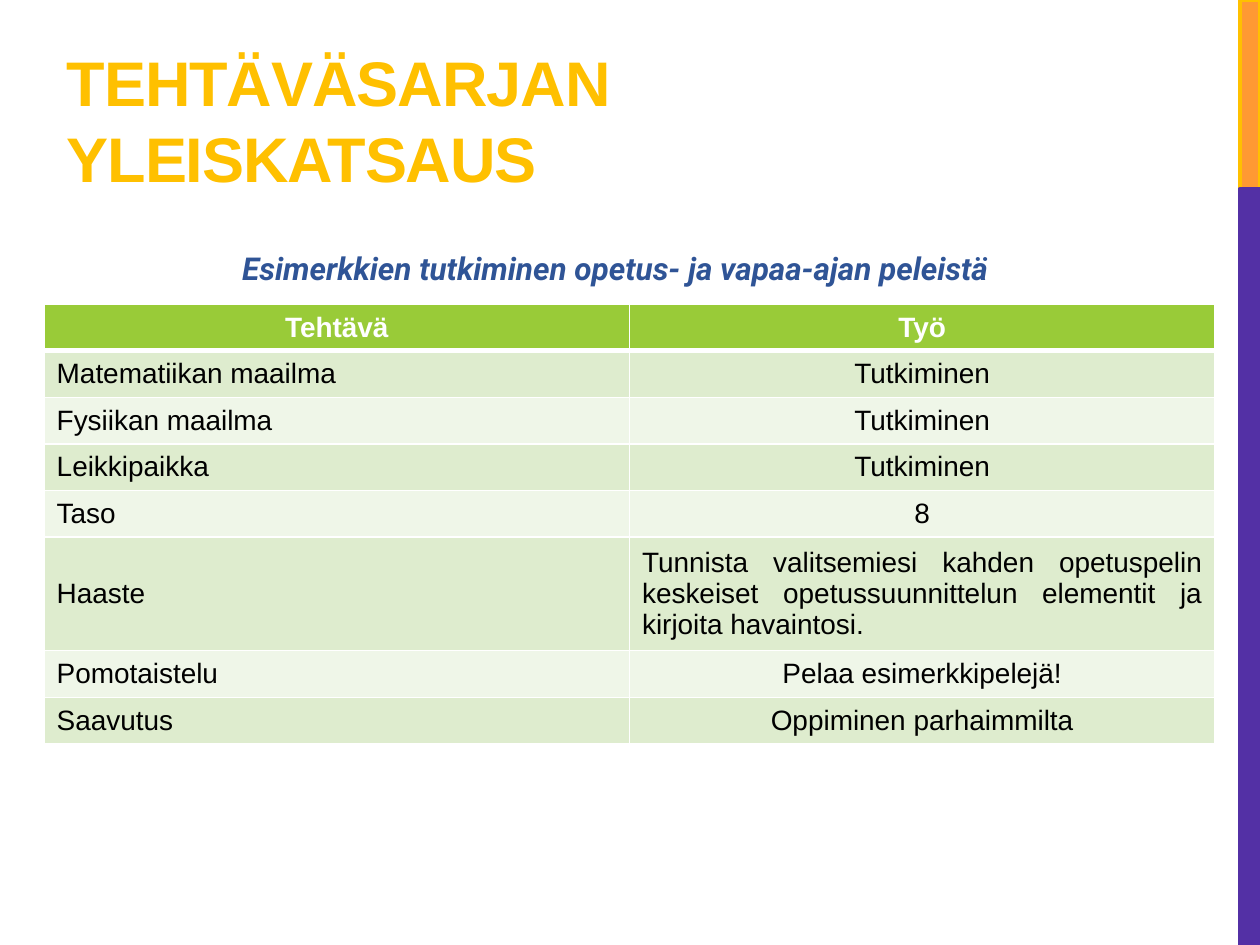
from dataclasses import dataclass

from lxml import etree
from pptx import Presentation
from pptx.dml.color import RGBColor
from pptx.enum.shapes import MSO_SHAPE
from pptx.enum.text import MSO_ANCHOR, MSO_AUTO_SIZE, PP_ALIGN
from pptx.oxml.ns import qn
from pptx.util import Cm, Pt

LEFT, CENTER, JUSTIFY = PP_ALIGN.LEFT, PP_ALIGN.CENTER, PP_ALIGN.JUSTIFY
TITLE_ONLY = 5
BAR_LEFT, BAR_WIDTH = 24.99, 0.41
ROW_HEIGHT, TALL_ROW_HEIGHT = 0.94, 2.23
COLUMN_WIDTH = 11.8
HEADER_FILL = "99CB38"
BAND_FILLS = ("DEECCE", "EFF6E8")

TITLE_FORMAT = {"name": "Arial", "size": Pt(36), "bold": True}
SUBTITLE_FORMAT = {"name": "Roboto", "size": Pt(18), "bold": True, "italic": True}
HEADER_FORMAT = {"name": "Arial", "size": Pt(16), "bold": True}
CELL_FORMAT = {**HEADER_FORMAT, "bold": False}


@dataclass
class Bar:
    top: float
    height: float
    fill: str
    line: str


@dataclass
class TaskRow:
    task: str
    work: str
    work_align: PP_ALIGN = CENTER
    height: float = ROW_HEIGHT


BARS = [
    Bar(0, 3.81, "FF9933", "FFC000"),
    Bar(3.81, 15.24, "5330A5", "5330A5"),
]

ROWS = [
    TaskRow("Tehtävä", "Työ"),
    TaskRow("Matematiikan maailma", "Tutkiminen"),
    TaskRow("Fysiikan maailma", "Tutkiminen"),
    TaskRow("Leikkipaikka", "Tutkiminen"),
    TaskRow("Taso", "8"),
    TaskRow("Haaste", "Tunnista valitsemiesi kahden opetuspelin keskeiset "
            "opetussuunnittelun elementit ja kirjoita havaintosi.",
            JUSTIFY, TALL_ROW_HEIGHT),
    TaskRow("Pomotaistelu", "Pelaa esimerkkipelejä!"),
    TaskRow("Saavutus", "Oppiminen parhaimmilta"),
]


def colour(value: str) -> RGBColor:
    return RGBColor.from_string(value)


def write(frame, text: str, align: PP_ALIGN, font_format: dict, font_colour: str):
    """Write one formatted paragraph and return it."""
    para = frame.paragraphs[0]
    para.alignment = align
    span = para.add_run()
    span.text = text
    for name, value in font_format.items():
        setattr(span.font, name, value)
    span.font.color.rgb = colour(font_colour)
    return para


def draw_bar(page, bar: Bar) -> None:
    shape = page.shapes.add_shape(MSO_SHAPE.RECTANGLE, Cm(BAR_LEFT), Cm(bar.top),
                                  Cm(BAR_WIDTH), Cm(bar.height))
    shape.shadow.inherit = False
    shape.fill.solid()
    shape.fill.fore_color.rgb = colour(bar.fill)
    shape.line.color.rgb = colour(bar.line)
    shape.line.width = Pt(2.25)


def draw_title(page) -> None:
    title = page.shapes.title
    title.left, title.top, title.width, title.height = Cm(1.09), Cm(0.25), Cm(16.08), Cm(3.81)
    frame = title.text_frame
    frame.auto_size = MSO_AUTO_SIZE.NONE
    frame.vertical_anchor = MSO_ANCHOR.BOTTOM
    para = write(frame, "TEHTÄVÄSARJAN YLEISKATSAUS", LEFT, TITLE_FORMAT, "FFC000")
    para.runs[0].font._element.set("spc", "-60")


def draw_subtitle(page) -> None:
    box = page.shapes.add_textbox(Cm(1.8), Cm(4.52), Cm(21.21), Cm(1.3))
    frame = box.text_frame
    frame.word_wrap = True
    frame.auto_size = MSO_AUTO_SIZE.SHAPE_TO_FIT_TEXT
    para = write(frame, "Esimerkkien tutkiminen opetus- ja vapaa-ajan peleistä",
                 CENTER, SUBTITLE_FORMAT, "2F5496")
    para.line_spacing = 1.5
    para.space_after = Pt(6)


def set_borders(cell, widths: dict) -> None:
    """Add white borders; they must stand before the fill in the cell properties."""
    properties = cell._tc.get_or_add_tcPr()
    for index, (side, width) in enumerate(widths.items()):
        line = etree.Element(qn(f"a:{side}"), w=str(Pt(width)))
        fill = etree.SubElement(line, qn("a:solidFill"))
        etree.SubElement(fill, qn("a:srgbClr"), val="FFFFFF")
        properties.insert(index, line)


def draw_table(page, rows: list[TaskRow]) -> None:
    total_height = sum(row.height for row in rows)
    table = page.shapes.add_table(len(rows), 2, Cm(0.89), Cm(6.13),
                                  Cm(2 * COLUMN_WIDTH), Cm(total_height)).table
    for column in table.columns:
        column.width = Cm(COLUMN_WIDTH)
    for index, row in enumerate(rows):
        header = index == 0
        table.rows[index].height = Cm(row.height)
        fill = HEADER_FILL if header else BAND_FILLS[(index - 1) % 2]
        font_format = HEADER_FORMAT if header else CELL_FORMAT
        font_colour = "FFFFFF" if header else "000000"
        widths = {"lnL": 1, "lnR": 1, "lnT": 3 if index == 1 else 1, "lnB": 3 if header else 1}
        entries = ((row.task, CENTER if header else LEFT), (row.work, row.work_align))
        for column_index, (text, align) in enumerate(entries):
            cell = table.cell(index, column_index)
            cell.vertical_anchor = MSO_ANCHOR.MIDDLE
            cell.fill.solid()
            cell.fill.fore_color.rgb = colour(fill)
            set_borders(cell, widths)
            write(cell.text_frame, text, align, font_format, font_colour)


def main() -> None:
    deck = Presentation()
    deck.slide_width, deck.slide_height = Cm(25.4), Cm(19.05)
    page = deck.slides.add_slide(deck.slide_layouts[TITLE_ONLY])

    # Side bars
    for bar in BARS:
        draw_bar(page, bar)

    # Headings
    draw_title(page)
    draw_subtitle(page)

    # Task overview
    draw_table(page, ROWS)

    deck.save("out.pptx")


if __name__ == "__main__":
    main()
